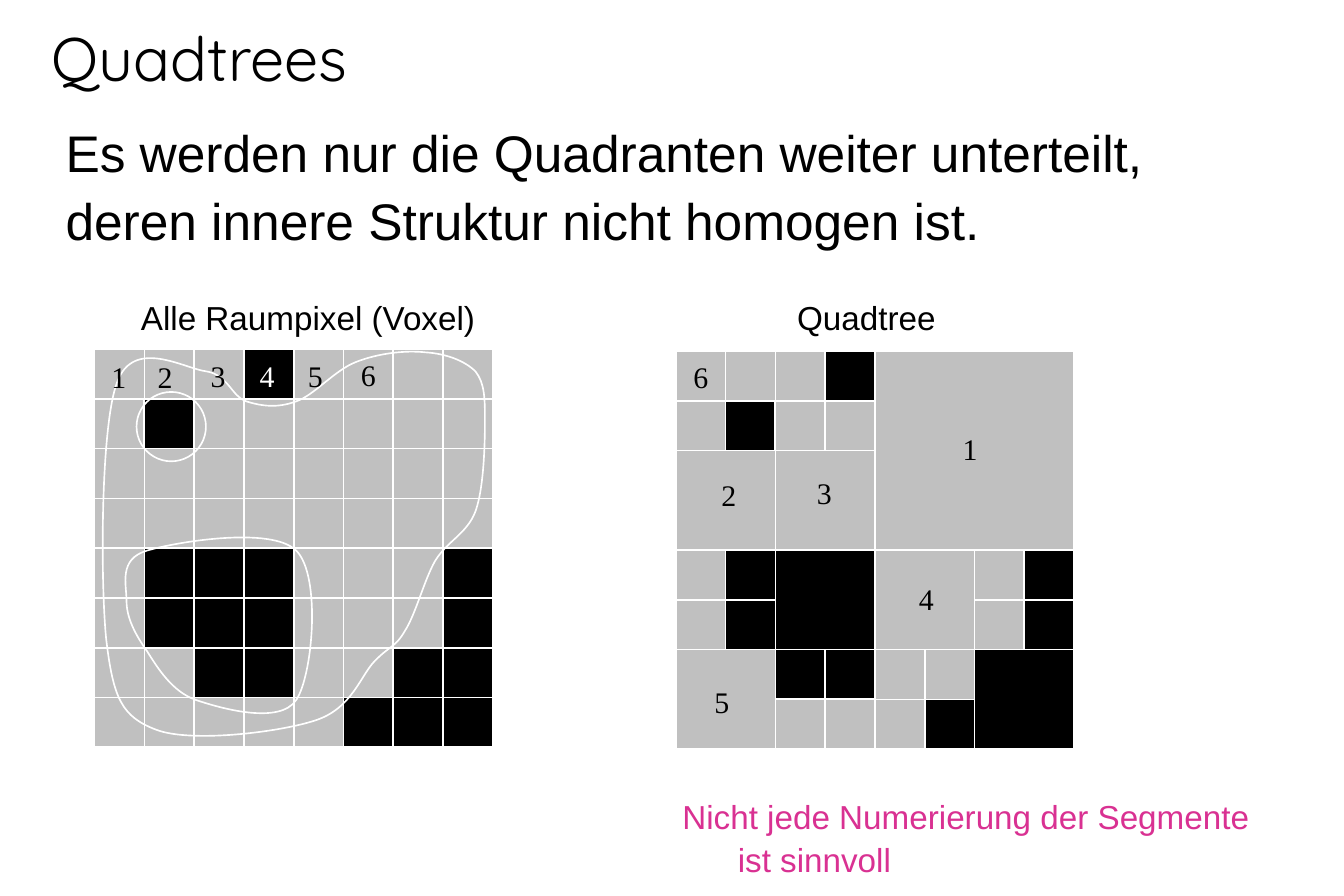
from dataclasses import dataclass
from typing import Iterator

from lxml import etree
from pptx import Presentation
from pptx.dml.color import RGBColor
from pptx.enum.shapes import MSO_CONNECTOR, MSO_SHAPE
from pptx.enum.text import MSO_ANCHOR, PP_ALIGN
from pptx.oxml.ns import qn
from pptx.util import Pt

RECTANGLE, OVAL = MSO_SHAPE.RECTANGLE, MSO_SHAPE.OVAL
STRAIGHT = MSO_CONNECTOR.STRAIGHT
TOP, MIDDLE, BOTTOM = MSO_ANCHOR.TOP, MSO_ANCHOR.MIDDLE, MSO_ANCHOR.BOTTOM
LEFT, CENTER = PP_ALIGN.LEFT, PP_ALIGN.CENTER

BLACK, GREY, WHITE, PINK = "000000", "C0C0C0", "FFFFFF", "D93192"
GRID, CELL = 8, 30

Point = tuple[float, float]


@dataclass(frozen=True)
class Region:
    """An area of the grid, in cells."""
    col: int
    row: int
    cols: int
    rows: int

    def cells(self) -> set[tuple[int, int]]:
        return {(self.col + i, self.row + j)
                for i in range(self.cols) for j in range(self.rows)}


@dataclass(frozen=True)
class Text:
    words: str
    left: float
    top: float
    width: float
    height: float
    size: float
    font: str = "Arial"
    color: str = BLACK
    anchor: MSO_ANCHOR = TOP
    align: PP_ALIGN = LEFT
    spacing: float = 1.1
    hanging: float = 0
    tab: float = 0
    wrap: bool = True


@dataclass(frozen=True)
class Number:
    digit: str
    x: float
    y: float
    color: str = BLACK


VOXELS: Point = (57, 210.4)
TREE: Point = (407.3, 211.5)
BLACK_REGIONS = [
    Region(1, 4, 3, 2), Region(3, 0, 1, 1), Region(7, 4, 1, 4), Region(1, 1, 1, 1),
    Region(2, 6, 2, 1), Region(6, 6, 1, 2), Region(5, 7, 1, 1),
]
BLACK_CELLS = set().union(*(region.cells() for region in BLACK_REGIONS))

# Bezier outlines: a start point, then three points for each segment
OUTER_OUTLINE: list[Point] = [
    (256.3, 212.4), (244.1, 211), (227.5, 213.1), (214.6, 218.2),
    (201.6, 223.2), (189.4, 238.3), (178.6, 241.9),
    (167, 246.2), (157.7, 244.8), (148.3, 241.9),
    (139.7, 239), (137.5, 226.1), (124.6, 223.9),
    (111.6, 222.5), (80.6, 203), (70.6, 230.4),
    (60.5, 257), (60.5, 351.4), (64.1, 385.9),
    (68.4, 421.2), (73.4, 432), (94.3, 439.9),
    (115.2, 447.8), (168.5, 441.4), (190.1, 434.2),
    (212.4, 427), (217.4, 406.8), (226.1, 398.2),
    (235.4, 388.8), (238.3, 390.2), (244.1, 380.2),
    (250.6, 370.1), (255.6, 349.9), (262.1, 338.4),
    (269.3, 326.2), (281.5, 321.8), (286.6, 308.2),
    (291.6, 294.5), (292.3, 267.8), (292.3, 254.2),
    (292.3, 240.5), (292.3, 231.1), (286.6, 223.9),
    (280.1, 217.4), (268.6, 213.1), (256.3, 212.4),
]
INNER_OUTLINE: list[Point] = [
    (88.6, 331.9), (71.3, 337), (76.3, 352.1), (76.3, 362.2),
    (76.3, 372.2), (81.4, 382.3), (88.6, 392.4),
    (95, 402.5), (103.7, 416.9), (118.1, 421.9),
    (133.2, 427), (168.5, 437), (178.6, 421.9),
    (188.6, 406.8), (193.7, 347), (178.6, 331.9),
    (163.4, 316.8), (105.1, 326.9), (88.6, 331.9),
]

TEXTS = [
    Text("Quadtrees", 23.8, -5, 732, 64.8, 37, "Quicksand", anchor=BOTTOM, spacing=1.04),
    Text("Es werden nur die Quadranten weiter unterteilt, deren innere Struktur "
         "nicht homogen ist.", 32.4, 65.5, 732, 100, 31),
    Text("Alle Raumpixel (Voxel)\tQuadtree", 77.8, 173.5, 732, 29.5, 20, tab=395.5),
    Text("Nicht jede Numerierung der Segmente\vist sinnvoll",
         404.2, 473.8, 388, 66, 20, color=PINK, hanging=33.4),
]
NUMBERS = [
    Number("1", 71.6, 226.8), Number("2", 99.5, 226.8), Number("3", 131.4, 226.1),
    Number("4", 160.9, 226.1, WHITE), Number("5", 190, 226.1), Number("6", 221.9, 225.8),
    Number("1", 584.7, 270.3), Number("2", 439.3, 298), Number("3", 496.8, 296.6),
    Number("4", 558.3, 360.7), Number("5", 435.1, 423), Number("6", 422.4, 226.8),
]


def rgb(color: str) -> RGBColor:
    return RGBColor.from_string(color)


def style(shape, fill: str | None) -> None:
    shape.shadow.inherit = False
    if fill:
        shape.fill.solid()
        shape.fill.fore_color.rgb = rgb(fill)
    else:
        shape.fill.background()
    shape.line.color.rgb = rgb(WHITE)
    shape.line.width = Pt(1)


def add_region(slide, origin: Point, region: Region, fill: str):
    left, top = origin
    area = slide.shapes.add_shape(
        RECTANGLE, Pt(left + region.col * CELL), Pt(top + region.row * CELL),
        Pt(region.cols * CELL), Pt(region.rows * CELL))
    style(area, fill)
    return area


def add_grid_line(slide, start: Point, end: Point):
    line = slide.shapes.add_connector(STRAIGHT, *map(Pt, start + end))
    line.line.color.rgb = rgb(WHITE)
    line.line.width = Pt(1)
    etree.SubElement(line._element.spPr, qn("a:effectLst"))
    return line


def add_grid(slide, origin: Point, black_regions: list[Region]) -> None:
    square = add_region(slide, origin, Region(0, 0, GRID, GRID), GREY)
    for region in black_regions:
        add_region(slide, origin, region, BLACK)
    left, top = origin
    right, bottom = left + GRID * CELL, top + GRID * CELL
    for i in range(1, GRID):
        x, y = left + i * CELL, top + i * CELL
        column_line = add_grid_line(slide, (x, top), (x, bottom))
        row_line = add_grid_line(slide, (left, y), (right, y))
        if i == GRID // 2:
            for line, start_side, end_side in ((column_line, 0, 2), (row_line, 1, 3)):
                line.begin_connect(square, start_side)
                line.end_connect(square, end_side)


def add_outline(slide, outline: list[Point]) -> None:
    builder = slide.shapes.build_freeform(*map(Pt, outline[0]), scale=1.0)
    builder.add_line_segments([(Pt(x), Pt(y)) for x, y in outline[1:]], close=True)
    contour = builder.convert_to_shape()
    style(contour, None)
    # Join every three line points into one Bezier segment
    points = list(contour._element.iter(qn("a:lnTo")))
    for i in range(0, len(outline) - 1, 3):
        curve = etree.Element(qn("a:cubicBezTo"))
        points[i].addprevious(curve)
        for point in points[i:i + 3]:
            curve.append(point[0])
            point.getparent().remove(point)


def quadtree_leaves(col: int, row: int, size: int) -> Iterator[tuple[Region, str]]:
    """Split a quadrant until every part has one colour."""
    quadrant = Region(col, row, size, size)
    colors = {BLACK if cell in BLACK_CELLS else GREY for cell in quadrant.cells()}
    if len(colors) == 1:
        yield quadrant, colors.pop()
        return
    half = size // 2
    for dy in (0, half):
        for dx in (0, half):
            yield from quadtree_leaves(col + dx, row + dy, half)


def add_text(slide, text: Text) -> None:
    box = slide.shapes.add_textbox(*map(Pt, (text.left, text.top, text.width, text.height)))
    frame = box.text_frame
    frame.word_wrap = text.wrap
    frame.vertical_anchor = text.anchor
    paragraph = frame.paragraphs[0]
    paragraph.text = text.words
    paragraph.alignment = text.align
    paragraph.line_spacing = text.spacing
    properties = paragraph._p.get_or_add_pPr()
    if text.hanging:
        properties.set("marL", str(Pt(text.hanging)))
        properties.set("indent", str(-Pt(text.hanging)))
    if text.tab:
        tabs = etree.SubElement(properties, qn("a:tabLst"))
        etree.SubElement(tabs, qn("a:tab"), pos=str(Pt(text.tab)), algn="l")
    paragraph.font.name = text.font
    paragraph.font.size = Pt(text.size)
    paragraph.font.color.rgb = rgb(text.color)


def main() -> None:
    prs = Presentation()
    prs.slide_width, prs.slide_height = Pt(810), Pt(540)
    slide = prs.slides.add_slide(prs.slide_layouts[6])

    # Quadtree: the grid, with the undivided quadrants laid over it
    quadrants = [leaf for leaf in quadtree_leaves(0, 0, GRID) if leaf[0].cols > 1]
    undivided = set().union(*(quadrant.cells() for quadrant, _ in quadrants))
    add_grid(slide, TREE, [r for r in BLACK_REGIONS if not r.cells() <= undivided])
    for quadrant, color in quadrants:
        add_region(slide, TREE, quadrant, color)

    # Voxels, with the contours of the object and its holes
    add_grid(slide, VOXELS, BLACK_REGIONS)
    add_outline(slide, OUTER_OUTLINE)
    style(slide.shapes.add_shape(OVAL, Pt(82.3), Pt(236.2), Pt(41.8), Pt(41.8)), None)
    add_outline(slide, INNER_OUTLINE)

    # Numbers, headings and remark
    for number in NUMBERS:
        add_text(slide, Text(number.digit, number.x - 12, number.y - 14.5, 24, 29, 18,
                             "Times New Roman", number.color, MIDDLE, CENTER, 1.0, wrap=False))
    for text in TEXTS:
        add_text(slide, text)
    prs.save("out.pptx")


if __name__ == "__main__":
    main()
